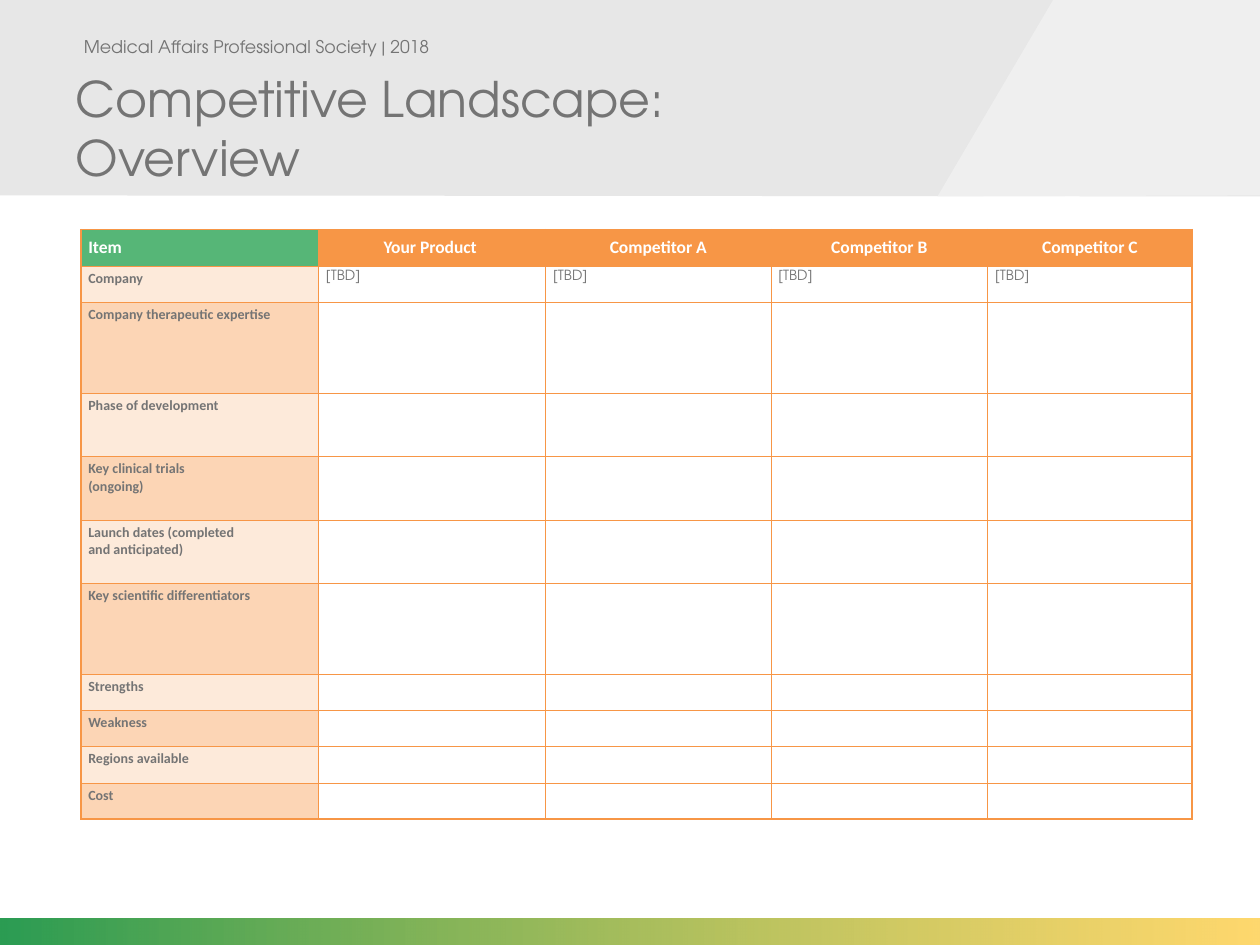
"""Build the competitive landscape overview slide."""
from dataclasses import dataclass
from typing import Optional

from lxml import etree
from pptx import Presentation
from pptx.dml.color import RGBColor
from pptx.enum.text import MSO_ANCHOR, MSO_AUTO_SIZE, PP_ALIGN
from pptx.enum.shapes import MSO_SHAPE
from pptx.oxml.ns import qn
from pptx.util import Cm, Pt

LEFT, CENTER = PP_ALIGN.LEFT, PP_ALIGN.CENTER
TOP, MIDDLE, BOTTOM = MSO_ANCHOR.TOP, MSO_ANCHOR.MIDDLE, MSO_ANCHOR.BOTTOM
NO_AUTOFIT = MSO_AUTO_SIZE.NONE
RECTANGLE = MSO_SHAPE.RECTANGLE


@dataclass(frozen=True)
class Theme:
    display: str = "TeX Gyre Adventor"
    label: str = "Calibri"
    grey: str = "747474"
    white: str = "FFFFFF"
    band: str = "D9D9D9"
    accent: str = "F2F2F2"
    green: str = "56B677"
    orange: str = "F79646"
    stripes: tuple = ("FDEADA", "FCD5B5")
    footer: tuple = (("13913F", 90), ("FEBE0D", 60))
    title_size: float = 28
    header_size: float = 10
    body_size: float = 8
    inner_line: float = 0.25
    outer_line: float = 1


@dataclass(frozen=True)
class Style:
    font: str
    size: float
    color: str
    bold: bool = False
    align: Optional[PP_ALIGN] = LEFT


@dataclass(frozen=True)
class Band:
    points: tuple
    color: str
    alpha: int


@dataclass(frozen=True)
class Item:
    label: str
    height: float
    value: str = ""


THEME = Theme()
TITLE = Style(THEME.display, THEME.title_size, THEME.grey)
SOCIETY = Style(THEME.display, THEME.header_size, THEME.grey, align=CENTER)
HEAD = Style(THEME.label, THEME.header_size, THEME.white, True)
HEAD_CENTER = Style(THEME.label, THEME.header_size, THEME.white, True, CENTER)
LABEL = Style(THEME.label, THEME.body_size, THEME.grey, True)
VALUE = Style(THEME.display, THEME.body_size, THEME.grey)

BANDS = (
    Band(((0, 0), (25.4, 0), (25.4, 3.96), (0, 3.94)), THEME.band, 62),
    Band(((21.23, 0), (25.4, 0), (25.4, 3.94), (18.9, 3.96)), THEME.accent, 79),
)
SHORT, MEDIUM, TALL = 0.73, 1.28, 1.83
HEADERS = ("Item", "Your Product ", "Competitor A", "Competitor B", "Competitor C")
WIDTHS = (4.79, 4.58, 4.54, 4.37, 4.12)
ITEMS = (
    Item("Company", SHORT, "[TBD]"),
    Item("Company therapeutic expertise", TALL),
    Item("Phase of development", MEDIUM),
    Item("Key clinical trials\n(ongoing)", MEDIUM),
    Item("Launch dates (completed \vand anticipated)", MEDIUM),
    Item("Key scientific differentiators", TALL),
    Item("Strengths", SHORT),
    Item("Weakness", SHORT),
    Item("Regions available", SHORT),
    Item("Cost", SHORT),
)


def set_alpha(color_parent, percent: int) -> None:
    """Make the colour inside an element partly transparent."""
    color = color_parent.find(".//" + qn("a:srgbClr"))
    etree.SubElement(color, qn("a:alpha"), val=str(percent * 1000))


def write(tf, text: str, style: Style) -> None:
    """Write paragraphs split at newlines and line breaks at vertical tabs."""
    for i, line in enumerate(text.split("\n")):
        p = tf.paragraphs[0] if i == 0 else tf.add_paragraph()
        p.alignment = style.align
        for j, part in enumerate(line.split("\v")):
            if j:
                p.add_line_break()
            if part:
                r = p.add_run()
                r.text = part
                r.font.name, r.font.size = style.font, Pt(style.size)
                r.font.bold = style.bold
                r.font.color.rgb = RGBColor.from_string(style.color)
        etree.SubElement(p._p, qn("a:endParaRPr"), sz=str(int(style.size * 100)))


def draw_band(s, band: Band) -> None:
    """Draw a translucent polygon of the header."""
    points = [(Cm(x), Cm(y)) for x, y in band.points]
    builder = s.shapes.build_freeform(*points[0])
    builder.add_line_segments(points[1:], close=True)
    sp = builder.convert_to_shape()
    sp.shadow.inherit = False
    sp.fill.solid()
    sp.fill.fore_color.rgb = RGBColor.from_string(band.color)
    set_alpha(sp._element.spPr.find(qn("a:solidFill")), band.alpha)
    sp.line.fill.background()


def draw_footer(s) -> None:
    """Draw the gradient strip along the bottom edge."""
    sp = s.shapes.add_shape(RECTANGLE, 0, Cm(18.51), Cm(25.4), Cm(0.54))
    sp.shadow.inherit = False
    sp.line.fill.background()
    sp.fill.gradient()
    sp.fill.gradient_angle = 0
    stops = sp._element.spPr.findall(".//" + qn("a:gs"))
    for stop, gs, (color, alpha) in zip(sp.fill.gradient_stops, stops, THEME.footer):
        stop.color.rgb = RGBColor.from_string(color)
        set_alpha(gs, alpha)


def draw_headings(s) -> None:
    """Write the society line and the slide title."""
    tf = s.shapes.add_textbox(Cm(1.22), Cm(0.43), Cm(7.9), Cm(1.02)).text_frame
    tf.word_wrap = True
    tf.vertical_anchor = MIDDLE
    write(tf, "Medical Affairs Professional Society | 2018", SOCIETY)
    title = s.shapes.title
    title.left, title.top, title.width, title.height = Cm(1.27), 0, Cm(19.05), Cm(3.89)
    tf = title.text_frame
    tf.auto_size = NO_AUTOFIT
    tf.vertical_anchor = BOTTOM
    write(tf, "Competitive Landscape: \vOverview", TITLE)
    s.shapes._spTree.append(title._element)


def format_cell(cell, fill: str, anchor: MSO_ANCHOR, outer: dict) -> None:
    """Set margins, borders and fill, with heavier lines on outer sides."""
    cell.margin_left = cell.margin_right = Cm(0.15)
    cell.margin_top = cell.margin_bottom = Cm(0.08)
    cell.vertical_anchor = anchor
    tc_pr = cell._tc.get_or_add_tcPr()
    for side in "LRTB":
        width = THEME.outer_line if outer[side] else THEME.inner_line
        ln = etree.SubElement(tc_pr, qn("a:ln" + side), w=str(Pt(width)))
        solid = etree.SubElement(ln, qn("a:solidFill"))
        etree.SubElement(solid, qn("a:srgbClr"), val=THEME.orange)
    cell.fill.solid()
    cell.fill.fore_color.rgb = RGBColor.from_string(fill)


def draw_table(s) -> None:
    """Draw the comparison table."""
    heights = [SHORT] + [item.height for item in ITEMS]
    rows, cols = len(heights), len(WIDTHS)
    table = s.shapes.add_table(rows, cols, Cm(1.63), Cm(4.63),
                               Cm(sum(WIDTHS)), Cm(sum(heights))).table
    table.horz_banding = False
    for column, width in zip(table.columns, WIDTHS):
        column.width = Cm(width)
    for row, height in zip(table.rows, heights):
        row.height = Cm(height)
    for i in range(rows):
        for j in range(cols):
            if i == 0:
                text, style = HEADERS[j], HEAD_CENTER if j else HEAD
                fill = THEME.orange if j else THEME.green
            elif j == 0:
                text, style = ITEMS[i - 1].label, LABEL
                fill = THEME.stripes[(i - 1) % 2]
            else:
                text, style, fill = ITEMS[i - 1].value, VALUE, THEME.white
            cell = table.cell(i, j)
            outer = {"L": j == 0, "R": j == cols - 1, "T": i == 0, "B": i == rows - 1}
            format_cell(cell, fill, TOP if i else MIDDLE, outer)
            write(cell.text_frame, text, style)


def main() -> None:
    """Build and save the presentation."""
    prs = Presentation()
    prs.slide_width, prs.slide_height = Cm(25.4), Cm(19.05)
    s = prs.slides.add_slide(prs.slide_layouts[5])
    for band in BANDS:
        draw_band(s, band)
    draw_footer(s)
    draw_headings(s)
    draw_table(s)
    prs.save("out.pptx")


if __name__ == "__main__":
    main()
